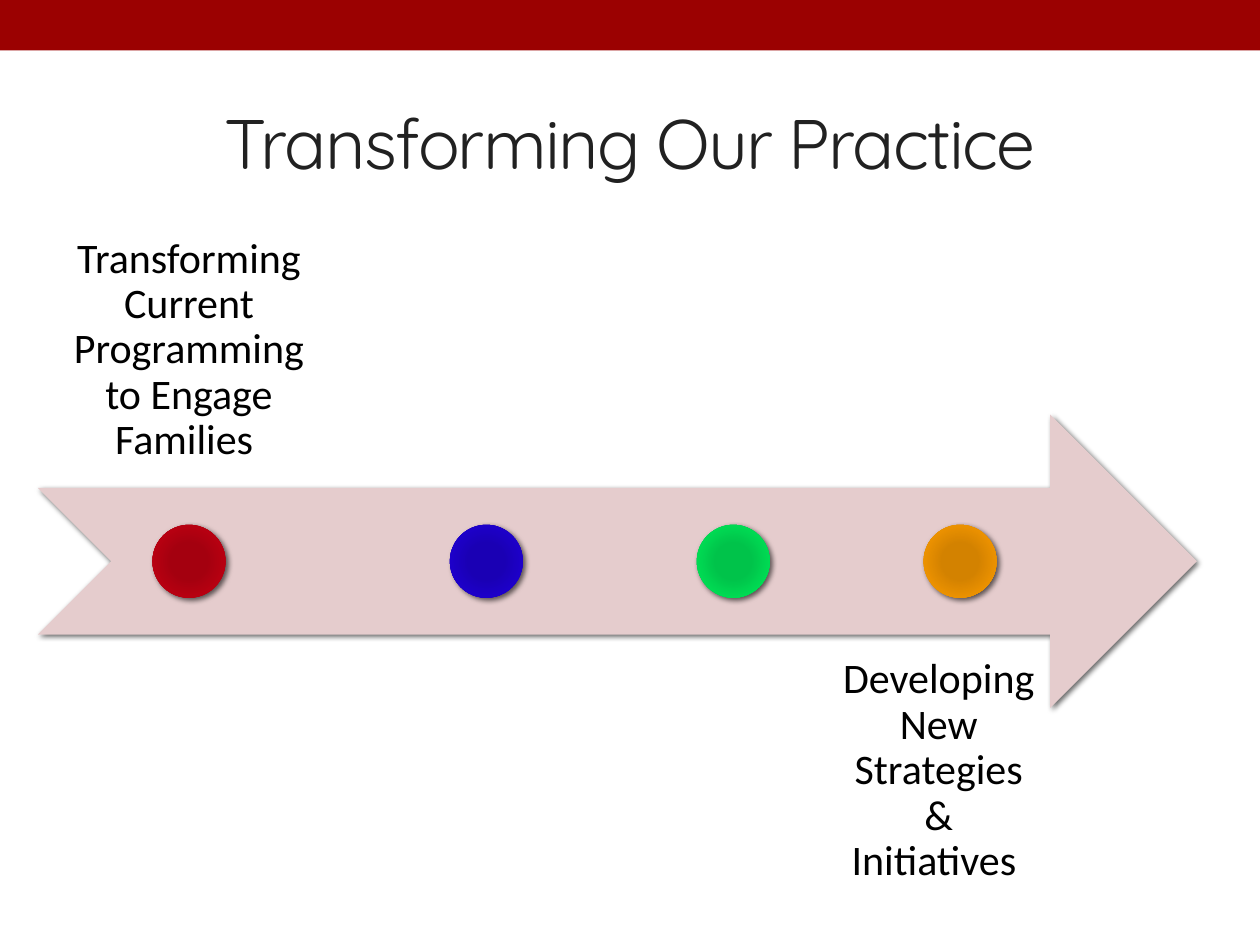
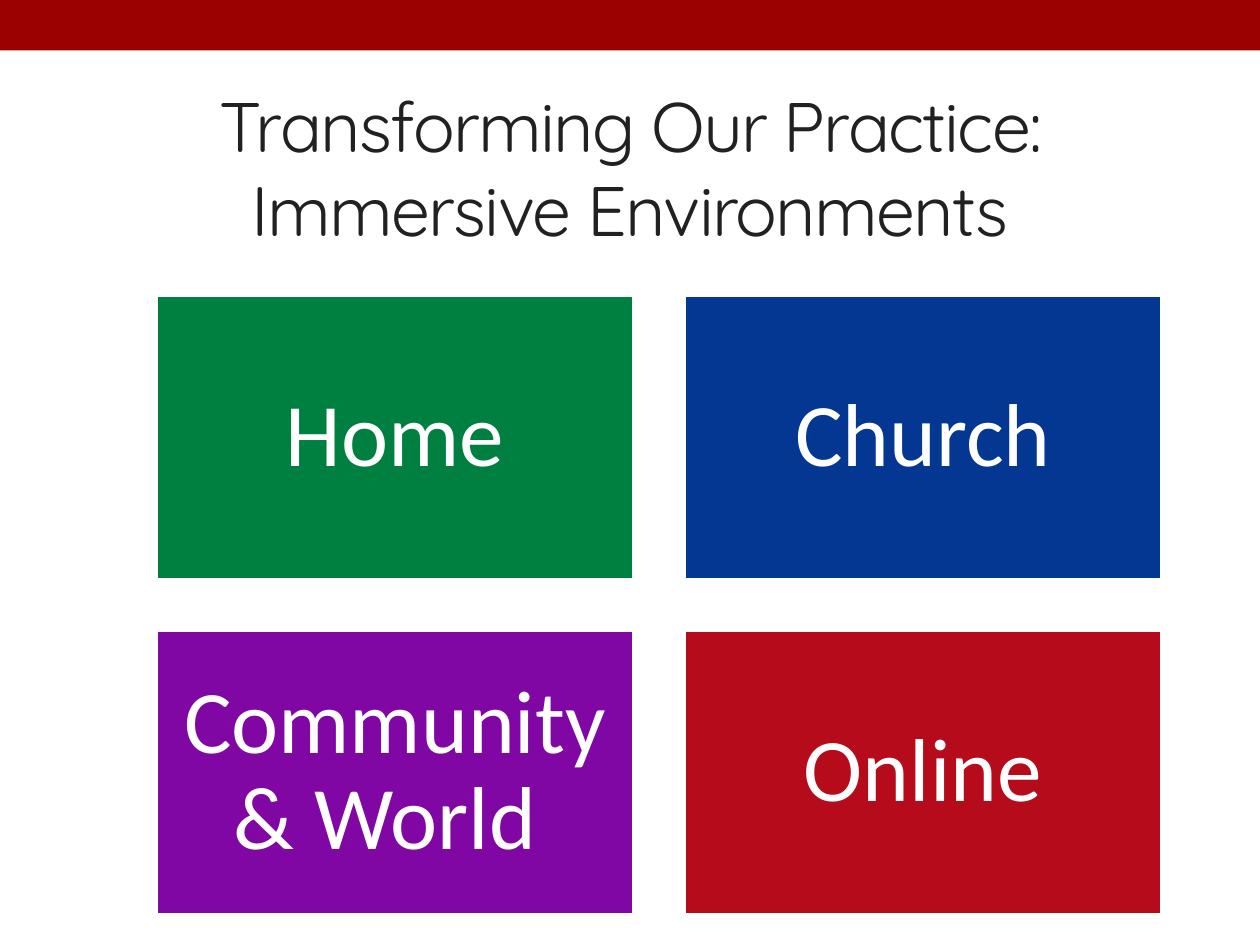
import dataclasses

import pptx
import pptx.dml.color
import pptx.enum.shapes
import pptx.enum.text
import pptx.oxml
import pptx.oxml.ns
import pptx.util

Inches = pptx.util.Inches
Pt = pptx.util.Pt
SHAPES = pptx.enum.shapes.MSO_SHAPE
ANCHORS = pptx.enum.text.MSO_ANCHOR


@dataclasses.dataclass(frozen=True)
class Theme:
    band: str = "9B0101"
    title: str = "212121"
    ink: str = "000000"
    paper: str = "FFFFFF"
    arrow: str = "E5CCCD"
    title_font: str = "Quicksand"
    body_font: str = "Calibri"
    title_size: int = 40
    label_size: int = 24
    tile_size: int = 51


@dataclasses.dataclass(frozen=True)
class Box:
    left: float
    top: float
    width: float
    height: float

    def emu(self) -> tuple:
        return tuple(Inches(v) for v in dataclasses.astuple(self))


@dataclasses.dataclass(frozen=True)
class Milestone:
    left: float
    core: str
    ring: str
    rim: str


@dataclasses.dataclass(frozen=True)
class Label:
    text: str
    box: Box
    anchor: ANCHORS


@dataclasses.dataclass(frozen=True)
class Tile:
    text: str
    color: str


THEME = Theme()

# Timeline slide
ARROW = Box(0.3, 3.29, 9.2, 2.33)
DOT_SIZE = 0.58
MILESTONES = [
    Milestone(1.21, "A4000F", "B70011", "B50B1B"),
    Milestone(3.57, "1A00B4", "1D00C9", "270CC6"),
    Milestone(5.53, "00C34A", "00DA53", "0DD75A"),
    Milestone(7.33, "D38200", "EB9100", "E8950E"),
]
LABELS = [
    Label("Transforming Current Programming to Engage Families ",
          Box(0.3, 1.54, 2.4, 2.33), ANCHORS.BOTTOM),
    Label("Developing New Strategies & Initiatives ",
          Box(6.49, 5.03, 1.92, 2.33), ANCHORS.TOP),
]

# Environments slide
GRID_LEFT, GRID_TOP, GRID_COLUMNS = 1.23, 2.33, 2
TILE_WIDTH, TILE_HEIGHT, TILE_GAP = 3.81, 2.28, 0.38
TILES = [
    Tile("Home", "008040"),
    Tile("Church", "033792"),
    Tile("Community & World ", "8007A4"),
    Tile("Online", "B50B1B"),
]


def rgb(color: str) -> pptx.dml.color.RGBColor:
    return pptx.dml.color.RGBColor.from_string(color)


def parse_drawing(xml: str):
    return pptx.oxml.parse_xml(xml.replace(
        ">", f" {pptx.oxml.ns.nsdecls('a')}>", 1))


def add_block(slide, kind: SHAPES, box: Box, color: str):
    """Add a flat preset shape without an outline."""
    block = slide.shapes.add_shape(kind, *box.emu())
    block.shadow.inherit = False
    block.fill.solid()
    block.fill.fore_color.rgb = rgb(color)
    block.line.fill.background()
    return block


def cast_shadow(block) -> None:
    effects = block.element.spPr.find(pptx.oxml.ns.qn("a:effectLst"))
    effects.append(parse_drawing(
        f'<a:outerShdw blurRad="{Pt(3)}" dist="{Pt(2)}" dir="2700000" rotWithShape="0">'
        f'<a:srgbClr val="{THEME.ink}"><a:alpha val="60000"/></a:srgbClr></a:outerShdw>'))


def shade_radially(block, milestone: Milestone) -> None:
    stops = [(0, milestone.core), (34, milestone.core),
             (70, milestone.ring), (100, milestone.rim)]
    stop_xml = "".join(f'<a:gs pos="{percent * 1000}"><a:srgbClr val="{color}"/></a:gs>'
                       for percent, color in stops)
    gradient = parse_drawing(
        f'<a:gradFill rotWithShape="1"><a:gsLst>{stop_xml}</a:gsLst><a:path path="circle">'
        '<a:fillToRect l="100000" t="100000" r="100000" b="100000"/></a:path></a:gradFill>')
    properties = block.element.spPr
    properties.replace(properties.find(pptx.oxml.ns.qn("a:solidFill")), gradient)


def write(frame, text: str, font: str, size: int, color: str,
          anchor: ANCHORS = ANCHORS.MIDDLE, inset: float | None = None,
          line_spacing: float = 1.0):
    """Write one centred paragraph and return its run."""
    frame_format = {"word_wrap": True, "vertical_anchor": anchor,
                    "auto_size": pptx.enum.text.MSO_AUTO_SIZE.NONE}
    if inset is not None:
        for side in ("left", "top", "right", "bottom"):
            frame_format[f"margin_{side}"] = Inches(inset)
    for name, value in frame_format.items():
        setattr(frame, name, value)
    paragraph = frame.paragraphs[0]
    paragraph.alignment = pptx.enum.text.PP_ALIGN.CENTER
    paragraph.line_spacing = line_spacing
    run = paragraph.add_run()
    run.text = text
    for name, value in {"name": font, "size": Pt(size)}.items():
        setattr(run.font, name, value)
    run.font.color.rgb = rgb(color)
    return run


def add_titled_slide(deck, layout, title: str, title_height: float):
    slide = deck.slides.add_slide(layout)
    heading = slide.shapes.title
    heading.left, heading.top, heading.width, heading.height = Box(
        0.5, 0.58, 9, title_height).emu()
    run = write(heading.text_frame, title, THEME.title_font,
                THEME.title_size, THEME.title)
    run.font.element.set("spc", "-100") if hasattr(run.font, "element") else \
        run._r.get_or_add_rPr().set("spc", "-100")
    return slide


def build_timeline(deck, layout):
    slide = add_titled_slide(deck, layout, "Transforming Our Practice", 1.08)
    cast_shadow(add_block(slide, SHAPES.NOTCHED_RIGHT_ARROW, ARROW, THEME.arrow))
    dot_top = ARROW.top + (ARROW.height - DOT_SIZE) / 2
    for milestone in MILESTONES:
        dot = add_block(slide, SHAPES.OVAL,
                        Box(milestone.left, dot_top, DOT_SIZE, DOT_SIZE), milestone.core)
        shade_radially(dot, milestone)
        cast_shadow(dot)
    for label in LABELS:
        caption = slide.shapes.add_textbox(*label.box.emu())
        write(caption.text_frame, label.text, THEME.body_font, THEME.label_size,
              THEME.ink, label.anchor, inset=0.19, line_spacing=0.9)
    return slide


def build_environments(deck, layout) -> None:
    slide = add_titled_slide(
        deck, layout, "Transforming Our Practice: Immersive Environments", 1.48)
    for index, tile in enumerate(TILES):
        row, column = divmod(index, GRID_COLUMNS)
        place = Box(GRID_LEFT + column * (TILE_WIDTH + TILE_GAP),
                    GRID_TOP + row * (TILE_HEIGHT + TILE_GAP), TILE_WIDTH, TILE_HEIGHT)
        panel = add_block(slide, SHAPES.RECTANGLE, place, tile.color)
        panel.line.color.rgb = rgb(THEME.paper)
        panel.line.width = Pt(3.5)
        write(panel.text_frame, tile.text, THEME.body_font, THEME.tile_size,
              THEME.paper, inset=0.21, line_spacing=0.9)


def main() -> None:
    deck = pptx.Presentation()
    deck.slide_width, deck.slide_height = Inches(10), Inches(7.5)
    title_only = deck.slide_layouts[5]
    timeline = build_timeline(deck, title_only)
    build_environments(deck, title_only)

    # The band belongs to the layout, so both slides inherit it
    band = add_block(timeline, SHAPES.RECTANGLE, Box(0, 0, 10, 0.4), THEME.band)
    title_only.shapes.element.append(band.element)
    deck.save("out.pptx")


if __name__ == "__main__":
    main()
